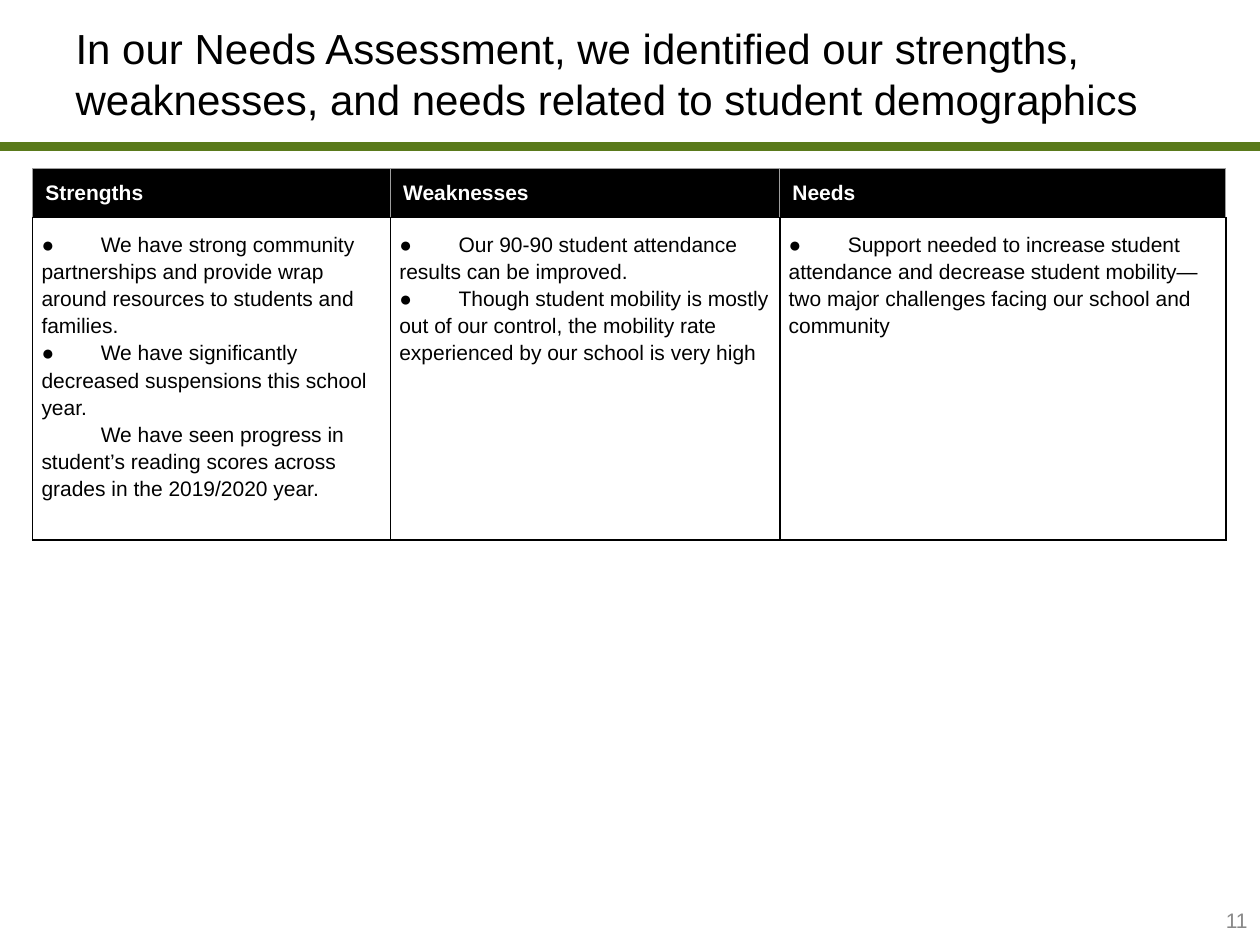
from lxml.etree import SubElement
from pptx import Presentation
from pptx.dml.color import RGBColor
from pptx.enum.shapes import MSO_CONNECTOR
from pptx.enum.text import MSO_ANCHOR, MSO_AUTO_SIZE, PP_ALIGN
from pptx.oxml.ns import qn
from pptx.util import Inches, Pt

BLACK, WHITE, GREEN = "000000", "FFFFFF", "5A7A1B"
GREY_BORDER, GREY_TEXT = "9E9E9E", "888888"
COLUMNS, ROWS = 100, 75

TITLE = ("In our Needs Assessment, we identified our strengths, "
         "weaknesses, and needs related to student demographics")
HEADINGS = ["Strengths", "Weaknesses", "Needs"]
# Each entry is (has a bullet, text)
POINTS = [
    [(True, "We have strong community partnerships and provide wrap around "
            "resources to students and families."),
     (True, "We have significantly decreased suspensions this school year."),
     (False, "We have seen progress in student’s reading scores across "
             "grades in the 2019/2020 year.")],
    [(True, "Our 90-90 student attendance results can be improved."),
     (True, "Though student mobility is mostly out of our control, the "
            "mobility rate experienced by our school is very high")],
    [(True, "Support needed to increase student attendance and decrease "
            "student mobility—two major challenges facing our school and "
            "community")],
]


def color(hex_string):
    return RGBColor.from_string(hex_string)


class SlideBuilder:
    font_name = "Arial"
    text_indent = Inches(0.47)

    def __init__(self, presentation):
        self.unit_x = presentation.slide_width / COLUMNS
        self.unit_y = presentation.slide_height / ROWS
        self.slide = presentation.slides.add_slide(presentation.slide_layouts[5])

    def x(self, columns):
        return round(columns * self.unit_x)

    def y(self, rows):
        return round(rows * self.unit_y)

    def box(self, left, top, width, height):
        return self.x(left), self.y(top), self.x(width), self.y(height)

    def add_run(self, paragraph, text, size, hex_string, bold=False):
        run = paragraph.add_run()
        run.text = text
        run.font.name = self.font_name
        run.font.size = Pt(size)
        run.font.bold = bold
        run.font.color.rgb = color(hex_string)

    def title(self, text, *box):
        shape = self.slide.shapes.title
        shape.left, shape.top, shape.width, shape.height = self.box(*box)
        self.fill_text(shape, text, 24, BLACK, PP_ALIGN.LEFT)

    def text(self, text, box, size, hex_string, alignment):
        shape = self.slide.shapes.add_textbox(*self.box(*box))
        self.fill_text(shape, text, size, hex_string, alignment)

    def fill_text(self, shape, text, size, hex_string, alignment):
        frame = shape.text_frame
        frame.word_wrap = True
        frame.auto_size = MSO_AUTO_SIZE.NONE
        frame.vertical_anchor = MSO_ANCHOR.MIDDLE
        paragraph = frame.paragraphs[0]
        paragraph.alignment = alignment
        self.add_run(paragraph, text, size, hex_string)

    def rule(self, row, width, hex_string):
        line = self.slide.shapes.add_connector(
            MSO_CONNECTOR.STRAIGHT, 0, self.y(row), self.x(COLUMNS), self.y(row))
        line.line.color.rgb = color(hex_string)
        line.line.width = Pt(width)
        SubElement(line._element.spPr, qn("a:effectLst"))

    def table(self, left, top, widths, heights):
        frame = self.slide.shapes.add_table(
            len(heights), len(widths),
            *self.box(left, top, sum(widths), sum(heights)))
        table = frame.table
        for column, width in zip(table.columns, widths):
            column.width = self.x(width)
        for row, height in zip(table.rows, heights):
            row.height = self.y(height)
        return table

    def style_cell(self, cell, fill, side_margin, borders):
        cell.margin_left = cell.margin_right = Inches(side_margin)
        cell.margin_top = cell.margin_bottom = Inches(0.1)
        properties = cell._tc.get_or_add_tcPr()
        for side, (hex_string, width) in zip("LRTB", borders):
            line = SubElement(properties, qn(f"a:ln{side}"), w=str(Pt(width)))
            solid = SubElement(line, qn("a:solidFill"))
            SubElement(solid, qn("a:srgbClr"), val=hex_string)
        cell.fill.solid()
        cell.fill.fore_color.rgb = color(fill)

    def header_cell(self, cell, text):
        grey, black = (GREY_BORDER, 0.75), (BLACK, 1)
        self.style_cell(cell, BLACK, 0.1, [grey, grey, grey, black])
        self.add_run(cell.text_frame.paragraphs[0], text, 12, WHITE, bold=True)

    def list_cell(self, cell, points):
        self.style_cell(cell, WHITE, 0.07, [(BLACK, 1)] * 4)
        frame = cell.text_frame
        for index, (bulleted, text) in enumerate(points):
            paragraph = frame.add_paragraph() if index else frame.paragraphs[0]
            self.indent(paragraph, bulleted)
            paragraph.line_spacing = 1.15
            self.add_run(paragraph, "\t" + text if bulleted else text, 12, BLACK)

    def indent(self, paragraph, bulleted):
        # Only the first line is indented; the bullet stands at the margin
        properties = paragraph._p.get_or_add_pPr()
        properties.set("marL", "0")
        properties.set("indent", "0" if bulleted else str(self.text_indent))
        if bulleted:
            SubElement(properties, qn("a:buFont"), typeface=self.font_name)
            SubElement(properties, qn("a:buChar"), char="●")
            tabs = SubElement(properties, qn("a:tabLst"))
            SubElement(tabs, qn("a:tab"), pos=str(self.text_indent), algn="l")


def main():
    presentation = Presentation()
    presentation.slide_width, presentation.slide_height = Inches(10), Inches(7.5)
    builder = SlideBuilder(presentation)

    # Title band and page number
    builder.rule(11.6, 5, GREEN)
    builder.text("11", (76.7, 71, 23.3, 4), 12, GREY_TEXT, PP_ALIGN.RIGHT)
    builder.title(TITLE, 5, 0, 90, 11.6)

    # Findings table
    table = builder.table(2.6, 13.4, [28.4, 30.9, 35.4], [3.85, 25.6])
    for index, (heading, points) in enumerate(zip(HEADINGS, POINTS)):
        builder.header_cell(table.cell(0, index), heading)
        builder.list_cell(table.cell(1, index), points)

    presentation.save("out.pptx")


if __name__ == "__main__":
    main()
